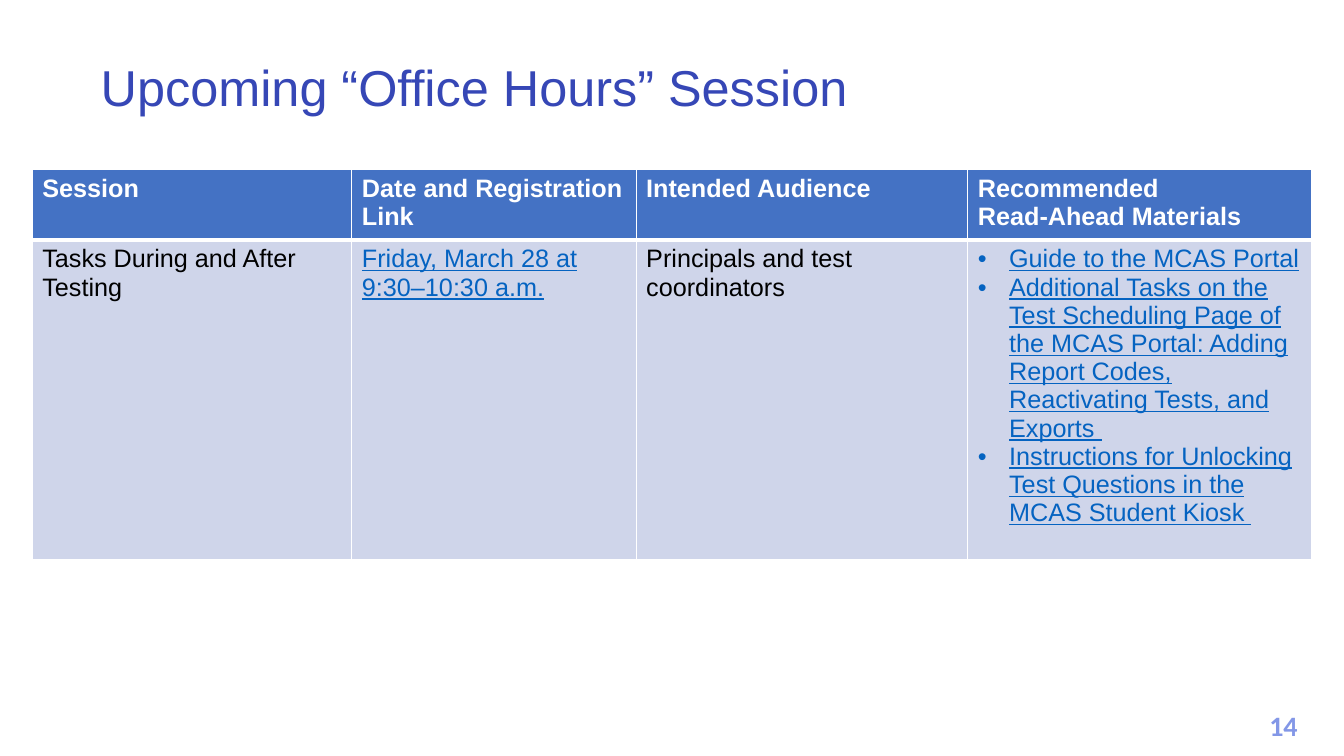
from pptx import Presentation
from pptx.dml.color import RGBColor
from pptx.enum.text import MSO_ANCHOR, PP_ALIGN
from pptx.oxml.ns import qn
from pptx.util import Inches, Pt
from lxml.etree import SubElement

TITLE = "Upcoming “Office Hours” Session"
PAGE = "14"
HEADERS = ["Session", "Date and Registration Link", "Intended Audience",
           "Recommended\nRead-Ahead Materials"]
SESSION = [
    ["Tasks During and After Testing"],
    ["Friday, March 28 at 9:30–10:30 a.m."],
    ["Principals and test coordinators"],
    ["Guide to the MCAS Portal ",
     "Additional Tasks on the Test Scheduling Page of the MCAS Portal: "
     "Adding Report Codes, Reactivating Tests, and Exports ",
     "Instructions for Unlocking Test Questions in the MCAS Student Kiosk "],
]
LINK_COLUMNS = (1, 3)
COLUMNS = [3.17, 2.82, 3.29, 3.41]
ROWS = [0.66, 3.17]

WHITE = RGBColor(0xFF, 0xFF, 0xFF)
BLACK = RGBColor(0, 0, 0)
TITLE_BLUE = RGBColor(0x36, 0x47, 0xB6)
PAGE_BLUE = RGBColor(0x83, 0x97, 0xE7)
HEADER_BLUE = RGBColor(0x44, 0x72, 0xC4)
BODY_BLUE = RGBColor(0xCF, 0xD5, 0xEA)
LINK_BLUE = RGBColor(0x05, 0x63, 0xC1)


def style(p, size, color, name="Arial", bold=False, underline=False):
    for r in p.runs:
        f = r.font
        f.size, f.name, f.bold, f.underline = Pt(size), name, bold, underline
        f.color.rgb = color


def add_text(s, box, text, size, color, name="Arial", bold=False):
    tf = s.shapes.add_textbox(*(Inches(v) for v in box)).text_frame
    tf.word_wrap = True
    tf.vertical_anchor = MSO_ANCHOR.MIDDLE
    p = tf.paragraphs[0]
    p.text = text
    style(p, size, color, name, bold)
    return p


def add_bullet(p):
    pPr = p._p.get_or_add_pPr()
    pPr.set("marL", str(Inches(0.31)))
    pPr.set("indent", str(-Inches(0.31)))
    SubElement(pPr, qn("a:buFont")).set("typeface", "Arial")
    SubElement(pPr, qn("a:buChar")).set("char", "•")


def add_borders(cell, widths):
    tcPr = cell._tc.get_or_add_tcPr()
    for side, width in zip("LRTB", widths):
        ln = SubElement(tcPr, qn(f"a:ln{side}"), w=str(Pt(width)))
        fill = SubElement(ln, qn("a:solidFill"))
        SubElement(fill, qn("a:srgbClr")).set("val", str(WHITE))


def fill_cell(cell, lines, fill, widths, **font):
    add_borders(cell, widths)
    cell.fill.solid()
    cell.fill.fore_color.rgb = fill
    tf = cell.text_frame
    for i, line in enumerate(lines):
        p = tf.add_paragraph() if i else tf.paragraphs[0]
        p.text = line
        if len(lines) > 1:
            add_bullet(p)
        style(p, 18, **font)


def add_schedule(s):
    frame = s.shapes.add_table(len(ROWS), len(COLUMNS), Inches(0.32), Inches(1.68),
                               Inches(sum(COLUMNS)), Inches(sum(ROWS)))
    table = frame.table
    table.horz_banding = False
    for row, height in zip(table.rows, ROWS):
        row.height = Inches(height)
    for i, width in enumerate(COLUMNS):
        table.columns[i].width = Inches(width)
        fill_cell(table.cell(0, i), [HEADERS[i]], HEADER_BLUE, (1, 1, 1, 3),
                  color=WHITE, bold=True)
        link = i in LINK_COLUMNS
        fill_cell(table.cell(1, i), SESSION[i], BODY_BLUE, (1, 1, 3, 1),
                  color=LINK_BLUE if link else BLACK, underline=link)


def main():
    """Build the office hours slide."""
    prs = Presentation()
    prs.slide_width, prs.slide_height = Inches(13.33), Inches(7.5)
    s = prs.slides.add_slide(prs.slide_layouts[6])
    page = add_text(s, (12.42, 6.98, 0.62, 0.44), PAGE, 20, PAGE_BLUE, "Calibri", True)
    page.alignment = PP_ALIGN.CENTER
    title = add_text(s, (0.9, 0.53, 12.43, 0.74), TITLE, 36, TITLE_BLUE)
    title.line_spacing = 0.9
    add_schedule(s)
    prs.save("out.pptx")


if __name__ == "__main__":
    main()
